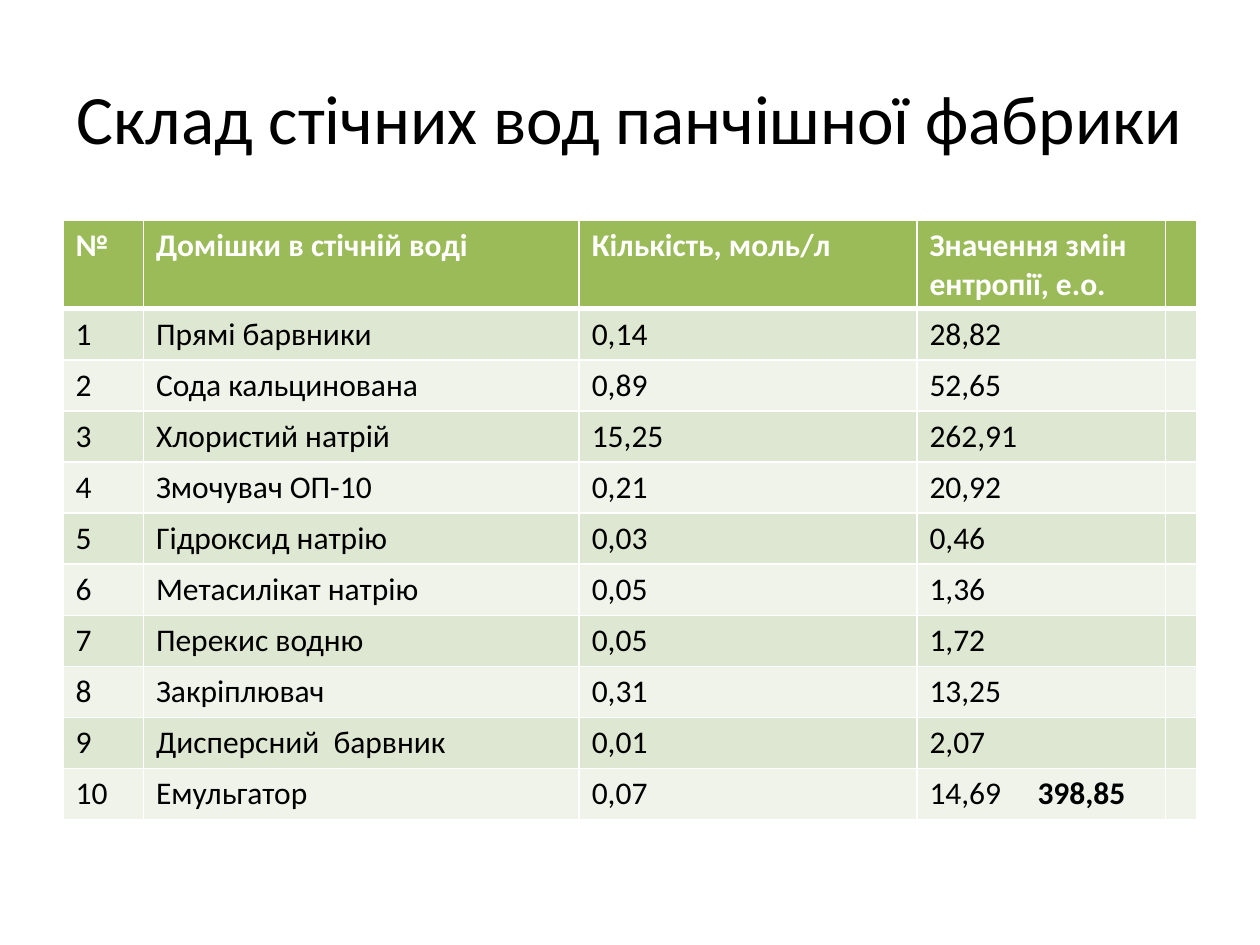
from lxml import etree
from pptx import Presentation
from pptx.dml.color import RGBColor
from pptx.enum.text import MSO_ANCHOR, PP_ALIGN
from pptx.oxml.ns import qn
from pptx.util import Pt

MIDDLE = MSO_ANCHOR.MIDDLE
CENTER = PP_ALIGN.CENTER

FONT = "Calibri"
COLORS = {
    "text": "000000",
    "white": "FFFFFF",
    "header": "9BBB59",
    "odd_row": "DEE7D1",
    "even_row": "EFF3EA",
}
TITLE = "Склад стічних вод панчішної фабрики"
HEADERS = ["№", "Домішки в стічній воді", "Кількість, моль/л",
           "Значення змін ентропії, е.о."]
IMPURITIES = [
    ("Прямі барвники", "0,14", "28,82"),
    ("Cода кальцинована", "0,89", "52,65"),
    ("Хлористий натрій", "15,25", "262,91"),
    ("Змочувач ОП-10", "0,21", "20,92"),
    ("Гідроксид натрію", "0,03", "0,46"),
    ("Метасилікат натрію", "0,05", "1,36"),
    ("Перекис водню", "0,05", "1,72"),
    ("Закріплювач", "0,31", "13,25"),
    ("Дисперсний  барвник", "0,01", "2,07"),
    ("Емульгатор", "0,07", "14,69"),
]
TOTAL = "398,85"
TOTAL_TAB = 61.7
COLUMN_WIDTHS = [46, 249, 193, 142, 18]
HEADER_HEIGHT = 50.4
ROW_HEIGHT = 29.2


def format_run(run, size, color, bold=False):
    run.font.name = FONT
    run.font.size = Pt(size)
    run.font.bold = bold
    run.font.color.rgb = RGBColor.from_string(COLORS[color])


def add_title(slide, left, top, width, height):
    shape = slide.shapes.add_textbox(Pt(left), Pt(top), Pt(width), Pt(height))
    text_frame = shape.text_frame
    text_frame.word_wrap = True
    text_frame.vertical_anchor = MIDDLE
    text_frame.text = TITLE
    paragraph = text_frame.paragraphs[0]
    paragraph.alignment = CENTER
    format_run(paragraph.runs[0], 39.6, "text")


def set_borders(cell, top, bottom):
    """Draw white borders; top and bottom are line widths in points."""
    properties = cell._tc.get_or_add_tcPr()
    for side, width in (("L", 1), ("R", 1), ("T", top), ("B", bottom)):
        line = etree.SubElement(properties, qn(f"a:ln{side}"), w=str(Pt(width)))
        fill = etree.SubElement(line, qn("a:solidFill"))
        etree.SubElement(fill, qn("a:srgbClr"), val=COLORS["white"])


def add_total(cell):
    """Add the bold sum after the cell's value, at a tab stop."""
    paragraph = cell.text_frame.paragraphs[0]
    tabs = etree.SubElement(paragraph._p.get_or_add_pPr(), qn("a:tabLst"))
    etree.SubElement(tabs, qn("a:tab"), pos=str(Pt(TOTAL_TAB)), algn="l")
    run = paragraph.add_run()
    run.text = "\t" + TOTAL
    format_run(run, 18, "text", bold=True)


def add_impurity_table(slide, left, top):
    rows = [HEADERS] + [(str(number), *impurity)
                        for number, impurity in enumerate(IMPURITIES, 1)]
    heights = [HEADER_HEIGHT] + [ROW_HEIGHT] * len(IMPURITIES)
    table = slide.shapes.add_table(
        len(rows), len(COLUMN_WIDTHS), Pt(left), Pt(top),
        Pt(sum(COLUMN_WIDTHS)), Pt(sum(heights))).table
    for column, width in zip(table.columns, COLUMN_WIDTHS):
        column.width = Pt(width)

    for index, (row, height, values) in enumerate(zip(table.rows, heights, rows)):
        row.height = Pt(height)
        is_header = index == 0
        fill = "header" if is_header else "odd_row" if index % 2 else "even_row"
        for cell in row.cells:
            set_borders(cell, top=3 if index == 1 else 1, bottom=3 if is_header else 1)
            cell.fill.solid()
            cell.fill.fore_color.rgb = RGBColor.from_string(COLORS[fill])
        for cell, value in zip(row.cells, values):
            cell.text_frame.text = value
            format_run(cell.text_frame.paragraphs[0].runs[0], 18,
                       "white" if is_header else "text", bold=is_header)
    add_total(table.cell(len(rows) - 1, len(HEADERS) - 1))


def main():
    presentation = Presentation()
    presentation.slide_width = Pt(720)
    presentation.slide_height = Pt(540)
    slide = presentation.slides.add_slide(presentation.slide_layouts[6])
    add_title(slide, 36, 21.6, 648, 90)
    add_impurity_table(slide, 36, 126)
    presentation.save("out.pptx")


if __name__ == "__main__":
    main()
